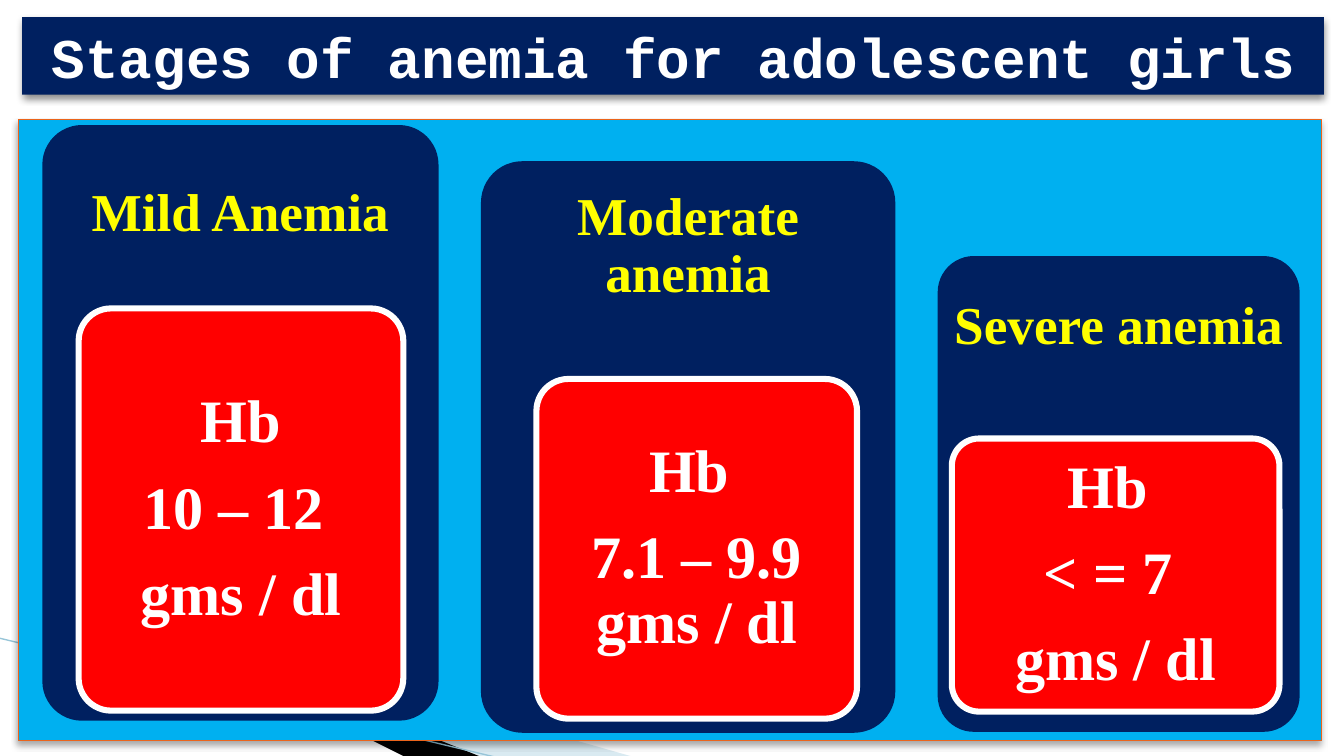
from dataclasses import dataclass

from lxml.etree import SubElement
from pptx import Presentation
from pptx.dml.color import RGBColor
from pptx.enum.shapes import MSO_CONNECTOR, MSO_SHAPE
from pptx.enum.text import MSO_ANCHOR as Anchor, PP_ALIGN as Align
from pptx.oxml.ns import qn
from pptx.util import Inches, Pt

WHITE = RGBColor(0xFF, 0xFF, 0xFF)
BLACK = RGBColor(0x00, 0x00, 0x00)
NAVY = RGBColor(0x00, 0x20, 0x60)
SKY = RGBColor(0x00, 0xB0, 0xF0)
RED = RGBColor(0xFF, 0x00, 0x00)
YELLOW = RGBColor(0xFF, 0xFF, 0x00)
ORANGE = RGBColor(0xEB, 0x64, 0x1B)
PALE_BLUE = RGBColor(0xA0, 0xCB, 0xDC)
LINE_BLUE = RGBColor(0x97, 0xC5, 0xD8)

SERIF = "Times New Roman"
HEADING_SHARE = 0.3  # part of a card's height taken by its heading
LINE_SPACING = 0.9
SPACE_AFTER = 0.35  # part of the font size


@dataclass
class Box:
    left: float
    top: float
    width: float
    height: float

    def lengths(self) -> list:
        return [Inches(value) for value in (self.left, self.top, self.width, self.height)]


@dataclass
class Stage:
    heading: str
    lines: list[str]
    card: Box
    level: Box


STAGES = [
    Stage("Mild Anemia", ["Hb", "10 – 12 ", "gms / dl"],
          Box(0.42, 1.24, 3.93, 5.91), Box(0.78, 3.06, 3.22, 3.99)),
    Stage("Moderate anemia", ["Hb ", "7.1 – 9.9 gms / dl"],
          Box(4.77, 1.6, 4.11, 5.67), Box(5.32, 3.76, 3.18, 3.37)),
    Stage("Severe anemia", ["Hb ", "< = 7 ", "gms / dl"],
          Box(9.3, 2.54, 3.59, 4.72), Box(9.44, 4.35, 3.25, 2.71)),
]


def add_box(slide, preset, box: Box, fill: RGBColor, line: RGBColor | None = None,
            line_width: float = 0):
    shape = slide.shapes.add_shape(preset, *box.lengths())
    shape.shadow.inherit = False
    shape.fill.solid()
    shape.fill.fore_color.rgb = fill
    if line is None:
        shape.line.fill.background()
    else:
        shape.line.color.rgb = line
        shape.line.width = Pt(line_width)
    if preset == MSO_SHAPE.ROUNDED_RECTANGLE:
        shape.adjustments[0] = 0.1
    return shape


def add_alpha(color_element, percent: int) -> None:
    SubElement(color_element, qn("a:alpha"), val=str(percent * 1000))


def drop_shadow(shape, percent: int, blur: float) -> None:
    """Cast a black shadow straight down from the shape."""
    effects = shape._element.spPr.find(qn("a:effectLst"))
    shadow = SubElement(effects, qn("a:outerShdw"), blurRad=str(Pt(blur)),
                        dist=str(Pt(3)), dir="5400000", rotWithShape="0")
    add_alpha(SubElement(shadow, qn("a:srgbClr"), val=str(BLACK)), percent)


def write(shape, lines: list[str], size: int, color: RGBColor, inset_x: float,
          inset_y: float, font: str = SERIF, spaced: bool = True) -> None:
    frame = shape.text_frame
    settings = {
        "word_wrap": True, "vertical_anchor": Anchor.MIDDLE,
        "margin_left": Inches(inset_x), "margin_right": Inches(inset_x),
        "margin_top": Inches(inset_y), "margin_bottom": Inches(inset_y),
    }
    for name, value in settings.items():
        setattr(frame, name, value)
    for index, line in enumerate(lines):
        paragraph = frame.add_paragraph() if index else frame.paragraphs[0]
        paragraph.alignment = Align.CENTER
        if spaced:
            paragraph.line_spacing = LINE_SPACING
            paragraph.space_after = Pt(size * SPACE_AFTER)
        run = paragraph.add_run()
        run.text = line
        for name, value in {"name": font, "size": Pt(size), "bold": True}.items():
            setattr(run.font, name, value)
        run.font.color.rgb = color


def add_wedge(slide, points: list[tuple[float, float]], fill: RGBColor):
    builder = slide.shapes.build_freeform(*points[0], scale=Inches(1))
    builder.add_line_segments(points[1:], close=True)
    wedge = builder.convert_to_shape()
    wedge.shadow.inherit = False
    wedge.fill.solid()
    wedge.fill.fore_color.rgb = fill
    wedge.line.fill.background()
    return wedge


def add_backdrop(slide) -> None:
    pale = add_wedge(slide, [(0.73, 6.5), (7.93, 7.51), (6.08, 7.51)], PALE_BLUE)
    add_alpha(pale._element.spPr.find(qn("a:solidFill"))[0], 40)
    add_wedge(slide, [(0.71, 6.49), (6.09, 7.51), (4.96, 7.51)], BLACK)
    edge = slide.shapes.add_connector(MSO_CONNECTOR.STRAIGHT, Inches(-0.01), Inches(6.33),
                                      Inches(4.95), Inches(7.52))
    edge.line.color.rgb = LINE_BLUE
    edge.line.width = Pt(0.95)
    SubElement(edge._element.spPr, qn("a:effectLst"))


def add_stage(slide, stage: Stage) -> None:
    card = stage.card
    add_box(slide, MSO_SHAPE.ROUNDED_RECTANGLE, card, NAVY)
    heading_box = Box(card.left, card.top, card.width, card.height * HEADING_SHARE)
    heading = slide.shapes.add_textbox(*heading_box.lengths())
    write(heading, [stage.heading], 38, YELLOW, 0.16, 0.16)
    level = add_box(slide, MSO_SHAPE.ROUNDED_RECTANGLE, stage.level, RED, WHITE, 4.33)
    write(level, stage.lines, 43, WHITE, 0.03, 0)


def main() -> None:
    presentation = Presentation()
    presentation.slide_width = Inches(13.33)
    presentation.slide_height = Inches(7.5)
    slide = presentation.slides.add_slide(presentation.slide_layouts[6])

    add_backdrop(slide)
    panel = add_box(slide, MSO_SHAPE.RECTANGLE, Box(0.18, 1.19, 12.93, 6.16), SKY, ORANGE, 0.75)
    drop_shadow(panel, 35, 4)
    title = add_box(slide, MSO_SHAPE.RECTANGLE, Box(0.22, 0.17, 12.91, 0.77), NAVY)
    drop_shadow(title, 45, 5)
    write(title, ["Stages of anemia for adolescent girls"], 40, WHITE, 0.1, 0.05,
          font="Courier New", spaced=False)
    for stage in STAGES:
        add_stage(slide, stage)

    presentation.save("out.pptx")


if __name__ == "__main__":
    main()
